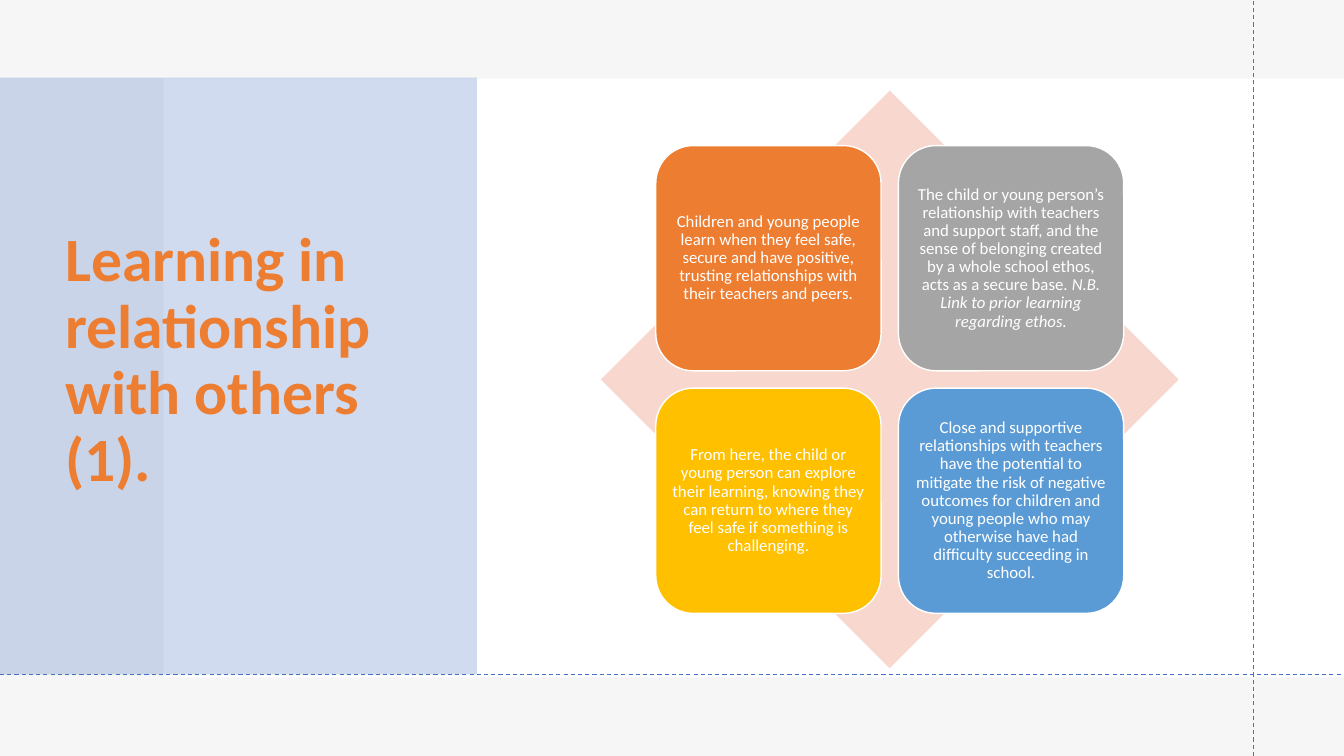
from lxml.etree import SubElement
from pptx import Presentation
from pptx.dml.color import RGBColor
from pptx.enum.dml import MSO_LINE
from pptx.enum.shapes import MSO_CONNECTOR, MSO_SHAPE
from pptx.enum.text import MSO_ANCHOR, PP_ALIGN
from pptx.oxml.ns import qn
from pptx.util import Inches, Pt

WIDTH, HEIGHT = 13.33, 7.5
BLUE, ORANGE, WHITE = "4472C4", "ED7D31", "FFFFFF"
TILES = [
    (ORANGE, "Children and young people learn when they feel safe, secure and have "
             "positive, trusting relationships with their teachers and peers.", ""),
    ("A5A5A5", "The child or young person’s relationship with teachers and support staff, "
               "and the sense of belonging created by a whole school ethos, acts as a "
               "secure base. ", "N.B. Link to prior learning regarding ethos."),
    ("FFC000", "From here, the child or young person can explore their learning, knowing "
               "they can return to where they feel safe if something is challenging.", ""),
    ("5B9BD5", "Close and supportive relationships with teachers have the potential to "
               "mitigate the risk of negative outcomes for children and young people who "
               "may otherwise have had difficulty succeeding in school.", ""),
]


def rgb(value):
    """Turn a hex string into a colour."""
    return RGBColor.from_string(value)


def add_block(slide, kind, box, fill, line=None):
    """Add a filled preset shape without a shadow."""
    sp = slide.shapes.add_shape(kind, *map(Inches, box))
    sp.shadow.inherit = False
    sp.fill.solid()
    sp.fill.fore_color.rgb = rgb(fill)
    if line:
        sp.line.color.rgb = rgb(line)
        sp.line.width = Pt(1)
    else:
        sp.line.fill.background()
    return sp


def style_text(tf, size, color, align, bold=False):
    """Wrap and centre a text frame vertically and set its paragraph's font."""
    tf.word_wrap = True
    tf.vertical_anchor = MSO_ANCHOR.MIDDLE
    p = tf.paragraphs[0]
    p.alignment, p.line_spacing = align, 0.9
    p.font.name, p.font.size, p.font.bold = "Calibri", Pt(size), bold
    p.font.color.rgb = rgb(color)


def add_guide(slide, x1, y1, x2, y2):
    """Add a thin dashed guide line."""
    line = slide.shapes.add_connector(MSO_CONNECTOR.STRAIGHT, *map(Inches, (x1, y1, x2, y2)))
    line.line.color.rgb = rgb(BLUE)
    line.line.width = Pt(0.75)
    line.line.dash_style = MSO_LINE.DASH
    SubElement(line._element.spPr, qn("a:effectLst"))


def add_title_panel(slide, left, top, width, height):
    """Add the translucent panel with the slide's title."""
    panel = add_block(slide, MSO_SHAPE.RECTANGLE, (left, top, width, height), BLUE)
    color = panel._element.spPr.find(qn("a:solidFill"))[0]
    SubElement(color, qn("a:alpha"), val="25000")
    box = (left + 0.55, top - 0.03, 3.95, 5.69)
    tf = slide.shapes.add_textbox(*map(Inches, box)).text_frame
    tf.text = "Learning in relationship with others (1)."
    style_text(tf, 44, ORANGE, PP_ALIGN.LEFT, bold=True)


def add_matrix(slide, left, top, side):
    """Add a diamond with four rounded tiles in a two by two grid."""
    add_block(slide, MSO_SHAPE.DIAMOND, (left, top, side, side), "F8D7CE")
    inset, step, tile = 0.095 * side, 0.42 * side, 0.39 * side
    for i, (fill, text, note) in enumerate(TILES):
        row, col = divmod(i, 2)
        box = (left + inset + col * step, top + inset + row * step, tile, tile)
        sp = add_block(slide, MSO_SHAPE.ROUNDED_RECTANGLE, box, fill, WHITE)
        tf = sp.text_frame
        tf.margin_left = tf.margin_right = tf.margin_top = tf.margin_bottom = Inches(0.05)
        tf.text = text
        style_text(tf, 12, WHITE, PP_ALIGN.CENTER)
        if note:
            r = tf.paragraphs[0].add_run()
            r.text = note
            r.font.italic = True


def main():
    """Build and save the slide."""
    prs = Presentation()
    prs.slide_width, prs.slide_height = Inches(WIDTH), Inches(HEIGHT)
    slide = prs.slides.add_slide(prs.slide_layouts[6])
    slide.background.fill.solid()
    slide.background.fill.fore_color.rgb = rgb("F6F6F6")
    add_block(slide, MSO_SHAPE.RECTANGLE, (1.62, 0.78, WIDTH - 1.62, 5.94), WHITE)
    add_title_panel(slide, 0, 0.77, 4.73, 5.92)
    add_guide(slide, 12.43, HEIGHT, 12.43, 0)
    add_guide(slide, 0, 6.69, WIDTH, 6.69)
    add_matrix(slide, 5.96, 0.9, 5.73)
    prs.save("out.pptx")


if __name__ == "__main__":
    main()
